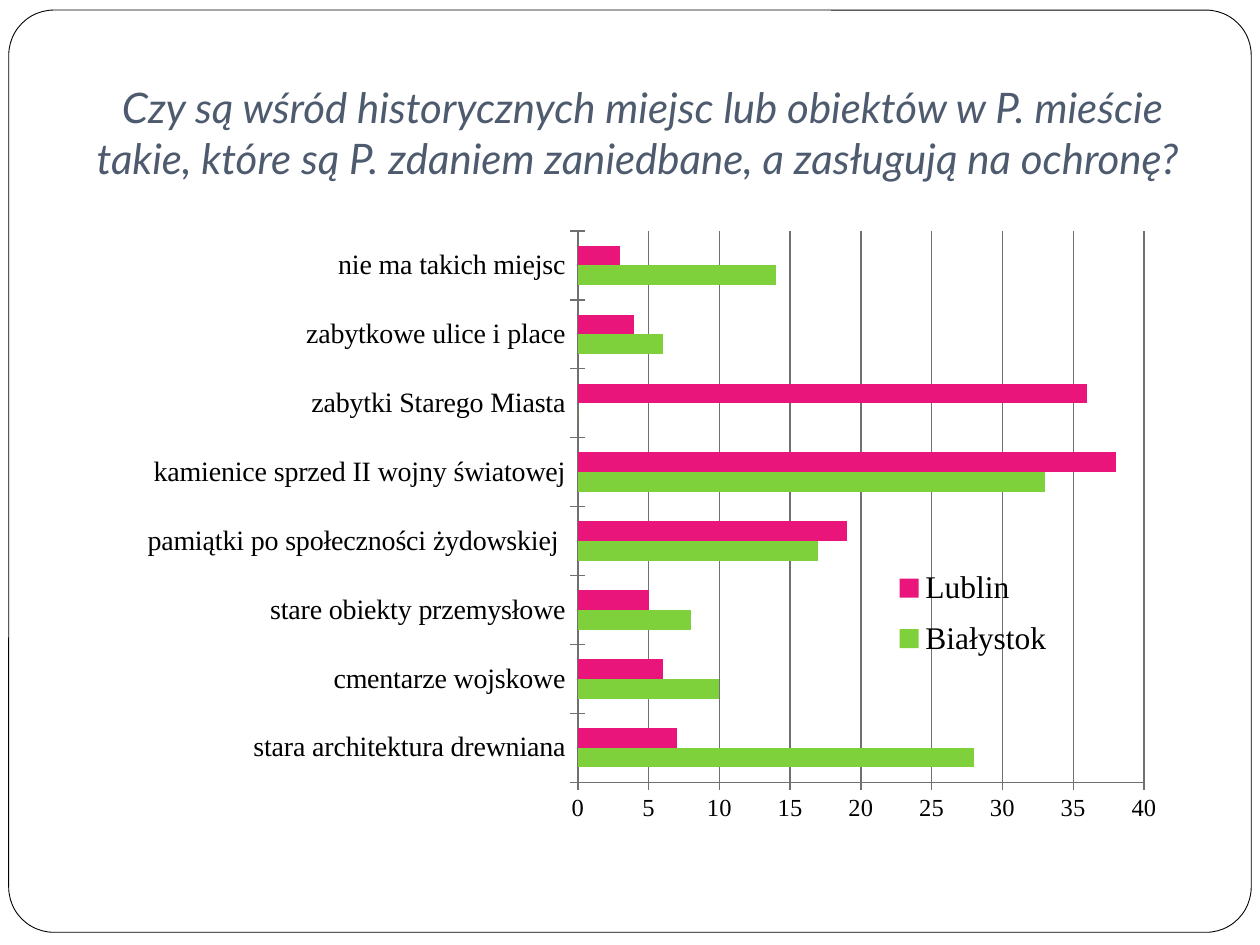
from lxml.etree import SubElement
from pptx import Presentation
from pptx.chart.data import CategoryChartData
from pptx.dml.color import RGBColor
from pptx.enum.chart import XL_CHART_TYPE as ChartType, XL_LEGEND_POSITION as LegendPosition
from pptx.enum.chart import XL_TICK_MARK as TickMark
from pptx.enum.shapes import MSO_SHAPE as Shape
from pptx.enum.text import MSO_ANCHOR as Anchor, MSO_AUTO_SIZE as AutoSize, PP_ALIGN as Align
from pptx.oxml.ns import qn
from pptx.util import Pt

WHITE = RGBColor(0xFF, 0xFF, 0xFF)
BLACK = RGBColor(0, 0, 0)
SLATE = RGBColor(0x4E, 0x5B, 0x6F)
GREY = RGBColor(0x70, 0x70, 0x70)
GREEN = RGBColor(0x7F, 0xD1, 0x3B)
PINK = RGBColor(0xEA, 0x15, 0x7A)

TITLE = (" Czy są wśród historycznych miejsc lub obiektów w P. mieście takie, "
         "które są P. zdaniem zaniedbane, a zasługują na ochronę?")
CATEGORIES = [
    "stara architektura drewniana",
    "cmentarze wojskowe",
    "stare obiekty przemysłowe",
    "pamiątki po społeczności żydowskiej ",
    "kamienice sprzed II wojny światowej",
    "zabytki Starego Miasta",
    "zabytkowe ulice i place",
    "nie ma takich miejsc",
]
SERIES = [
    ("Białystok", GREEN, (28, 10, 8, 17, 33, 0, 6, 14)),
    ("Lublin", PINK, (7, 6, 5, 19, 38, 36, 4, 3)),
]

FRAME_BOX = [Pt(n) for n in (5, 5.75, 710, 527)]
TITLE_BOX = [Pt(n) for n in (44.6, 21.6, 639.4, 90)]
CHART_BOX = [Pt(n) for n in (0, 112.3, 674, 393.8)]
PLOT_LAYOUT = {"x": 0.49, "y": 0.05, "w": 0.48, "h": 0.8}
LEGEND_LAYOUT = {"x": 0.75, "y": 0.52, "w": 0.15, "h": 0.17}


def place(element, index, fractions, inner=False):
    """Give a chart part a manual layout, in fractions of the chart area."""
    for old in element.findall(qn("c:layout")):
        element.remove(old)
    layout = SubElement(element, qn("c:layout"))
    element.insert(index, layout)
    manual = SubElement(layout, qn("c:manualLayout"))
    settings = {"layoutTarget": "inner"} if inner else {}
    settings.update(xMode="edge", yMode="edge", **fractions)
    for name, value in settings.items():
        SubElement(manual, qn(f"c:{name}")).set("val", str(value))


def add_frame(slide):
    frame = slide.shapes.add_shape(Shape.ROUNDED_RECTANGLE, *FRAME_BOX)
    frame.adjustments[0] = 0.049
    frame.shadow.inherit = False
    frame.fill.solid()
    frame.fill.fore_color.rgb = WHITE
    frame.line.color.rgb = BLACK
    frame.line.width = Pt(0.5)
    # Behind the title placeholder
    slide.shapes.title._element.addprevious(frame._element)


def format_title(title):
    title.left, title.top, title.width, title.height = TITLE_BOX
    text_frame = title.text_frame
    text_frame.text = TITLE
    text_frame.word_wrap = True
    text_frame.auto_size = AutoSize.NONE
    text_frame.vertical_anchor = Anchor.BOTTOM
    text_frame.margin_bottom = Pt(7.2)
    paragraph = text_frame.paragraphs[0]
    paragraph.alignment = Align.CENTER
    font = paragraph.runs[0].font
    font.name, font.size = "Lato", Pt(24)
    font.bold, font.italic = False, True
    font.color.rgb = SLATE


def add_bar_chart(slide):
    data = CategoryChartData()
    data.categories = CATEGORIES
    for name, _, values in SERIES:
        data.add_series(name, values)
    chart = slide.shapes.add_chart(ChartType.BAR_CLUSTERED, *CHART_BOX, data).chart
    chart.has_title = False
    chart.font.name, chart.font.size = "Times New Roman", Pt(10)
    chart.font.color.rgb = BLACK

    plot = chart.plots[0]
    plot.gap_width, plot.overlap, plot.vary_by_categories = 150, 0, False
    for series, (_, color, _) in zip(plot.series, SERIES):
        series.format.fill.solid()
        series.format.fill.fore_color.rgb = color

    value_axis = chart.value_axis
    value_axis.minimum_scale, value_axis.maximum_scale = 0, 40
    value_axis.major_unit = 5
    value_axis.has_major_gridlines = True
    for axis, size in ((chart.category_axis, 16), (value_axis, 14)):
        axis.major_tick_mark = TickMark.CROSS
        axis.tick_labels.font.size = Pt(size)
    for lines in (chart.category_axis, value_axis, value_axis.major_gridlines):
        lines.format.line.color.rgb = GREY
        lines.format.line.width = Pt(0.75)

    chart.has_legend = True
    legend = chart.legend
    legend.position = LegendPosition.RIGHT
    legend.include_in_layout = False
    legend.font.size = Pt(18)
    place(legend._element, 1, LEGEND_LAYOUT)
    place(chart._chartSpace.chart.plotArea, 0, PLOT_LAYOUT, inner=True)


def main():
    presentation = Presentation()
    presentation.slide_width, presentation.slide_height = Pt(720), Pt(540)
    slide = presentation.slides.add_slide(presentation.slide_layouts[5])
    add_frame(slide)
    format_title(slide.shapes.title)
    add_bar_chart(slide)
    presentation.save("out.pptx")


if __name__ == "__main__":
    main()
